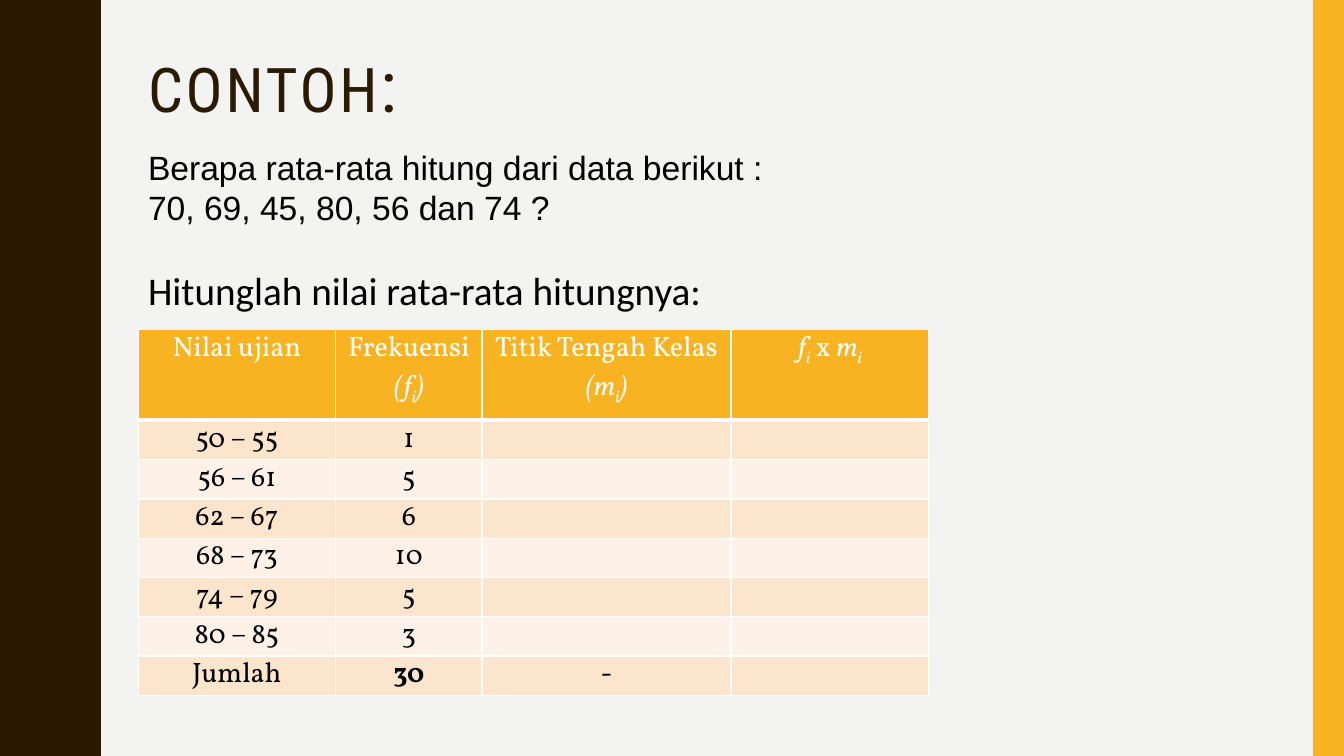
from dataclasses import dataclass

from lxml import etree
from pptx import Presentation
from pptx.dml.color import RGBColor
from pptx.enum.shapes import MSO_SHAPE
from pptx.enum.text import MSO_ANCHOR, PP_ALIGN
from pptx.oxml.ns import qn
from pptx.util import Inches, Pt

RECT = MSO_SHAPE.RECTANGLE
TOP, MIDDLE = MSO_ANCHOR.TOP, MSO_ANCHOR.MIDDLE
LEFT, CENTER, JUSTIFY = PP_ALIGN.LEFT, PP_ALIGN.CENTER, PP_ALIGN.JUSTIFY

BROWN, GOLD, PAPER = "2A1A00", "F8B323", "F3F3F2"
WHITE, BLACK = "FFFFFF", "000000"
BANDS = ("FCE5CD", "FEF2E8")
WIDE, HIGH = 13.33, 7.5
PERIOD = 1.5


@dataclass
class Part:
    text: str
    italic: bool = False
    sub: bool = False
    bold: bool = False
    size: float = 20


@dataclass
class Box:
    top: float
    width: float
    height: float
    lines: list[list[Part]]
    font: str
    color: str = BLACK
    align: PP_ALIGN = LEFT
    anchor: MSO_ANCHOR = TOP
    gap: int = 0
    space: float = 1.0


def tint(code: str) -> RGBColor:
    return RGBColor.from_string(code)


def paint(shape, code: str) -> None:
    shape.fill.solid()
    shape.fill.fore_color.rgb = tint(code)
    shape.line.fill.background()
    shape.shadow.inherit = False


def write(para, parts: list[Part], font: str, color: str, gap: int = 0) -> None:
    for part in parts:
        run = para.add_run()
        run.text = part.text
        face = run.font
        face.name = font
        face.size = Pt(part.size)
        face.color.rgb = tint(color)
        face.bold = part.bold
        face.italic = part.italic
        props = run._r.get_or_add_rPr()
        if part.sub:
            props.set("baseline", "-25000")
        if gap:
            props.set("spc", str(gap))


def draw_box(slide, box: Box) -> None:
    shape = slide.shapes.add_textbox(
        Inches(1.37), Inches(box.top), Inches(box.width), Inches(box.height))
    frame = shape.text_frame
    frame.word_wrap = True
    frame.vertical_anchor = box.anchor
    for num, line in enumerate(box.lines):
        para = frame.add_paragraph() if num else frame.paragraphs[0]
        para.alignment = box.align
        para.line_spacing = box.space
        write(para, line, box.font, box.color, box.gap)


def draw_wave(slide) -> None:
    rise = [(0.78, 0), (0.78, 0.07), (0.79, 0.14), (0.8, 0.2), (0.81, 0.25),
            (0.83, 0.29), (0.85, 0.33), (0.87, 0.38), (0.89, 0.42), (0.91, 0.46),
            (0.93, 0.5), (0.95, 0.55), (0.96, 0.61), (0.97, 0.68), (0.97, 0.75)]
    fall = [(x, PERIOD - y) for x, y in reversed(rise[:-1])]
    edge = [(x, y + turn * PERIOD) for turn in range(5) for x, y in rise + fall]
    pen = slide.shapes.build_freeform(0, 0, scale=Inches(1))
    pen.add_line_segments(edge + [(0, HIGH)], close=True)
    paint(pen.convert_to_shape(), BROWN)


def add_edges(cell) -> None:
    props = cell._tc.get_or_add_tcPr()
    for spot, (side, width) in enumerate((("L", 1), ("R", 1), ("T", 1), ("B", 3))):
        line = etree.Element(qn(f"a:ln{side}"), w=str(Pt(width)))
        fill = etree.SubElement(line, qn("a:solidFill"))
        etree.SubElement(fill, qn("a:srgbClr"), val=WHITE)
        props.insert(spot, line)


def draw_table(slide, rows: list[list[list[Part]]]) -> None:
    widths = (1.96, 1.45, 2.47, 1.96)
    heights = [0.9] + [0.39] * (len(rows) - 1)
    grid = slide.shapes.add_table(
        len(rows), len(widths), Inches(1.37), Inches(3.27),
        Inches(sum(widths)), Inches(sum(heights))).table
    for col, width in zip(grid.columns, widths):
        col.width = Inches(width)
    for num, (row, high) in enumerate(zip(rows, heights)):
        grid.rows[num].height = Inches(high)
        for col, parts in enumerate(row):
            cell = grid.cell(num, col)
            cell.margin_left = cell.margin_right = Inches(0.07)
            cell.margin_top = cell.margin_bottom = 0
            cell.fill.solid()
            cell.fill.fore_color.rgb = tint(BANDS[(num - 1) % 2] if num else GOLD)
            para = cell.text_frame.paragraphs[0]
            para.alignment = CENTER
            write(para, parts, "Vollkorn", BLACK if num else WHITE)
            if num == 0:
                add_edges(cell)


def main() -> None:
    deck = Presentation()
    deck.slide_width, deck.slide_height = Inches(WIDE), Inches(HIGH)
    slide = deck.slides.add_slide(deck.slide_layouts[6])
    slide.background.fill.solid()
    slide.background.fill.fore_color.rgb = tint(PAPER)

    draw_wave(slide)
    bar = slide.shapes.add_shape(
        RECT, Inches(13.02), 0, Inches(0.31), Inches(HIGH))
    paint(bar, GOLD)

    boxes = [
        Box(0.42, 11.13, 0.93, [[Part("CONTOH", size=44), Part(":", size=51)]],
            "Roboto Condensed", BROWN, anchor=MIDDLE, gap=200, space=0.9),
        Box(1.4, 8.4, 0.91,
            [[Part("Berapa rata-rata hitung dari data berikut :", size=24)],
             [Part("70, 69, 45, 80, 56 dan 74 ?", size=24)]],
            "Arial", align=JUSTIFY, anchor=MIDDLE),
        Box(2.59, 8.31, 0.57,
            [[Part("Hitunglah nilai rata-rata hitungnya:", size=28)]], "Calibri"),
    ]
    for box in boxes:
        draw_box(slide, box)

    low = Part("i", italic=True, sub=True)
    shut = Part(")", italic=True)
    head = [
        [Part("Nilai ujian")],
        [Part("Frekuensi "), Part("(f", italic=True), low, shut],
        [Part("Titik Tengah Kelas "), Part("(m", italic=True), low, shut],
        [Part("f", italic=True), low, Part(" x "), Part("m", italic=True), low],
    ]
    counts = {"50 – 55": 1, "56 – 61": 5, "62 – 67": 6,
              "68 – 73": 10, "74 – 79": 5, "80 – 85": 3}
    body = [[[Part(span)], [Part(str(count))], [], []]
            for span, count in counts.items()]
    total = str(sum(counts.values()))
    foot = [[Part("Jumlah")], [Part(total, bold=True)], [Part("-")], []]
    draw_table(slide, [head, *body, foot])

    deck.save("out.pptx")


if __name__ == "__main__":
    main()
